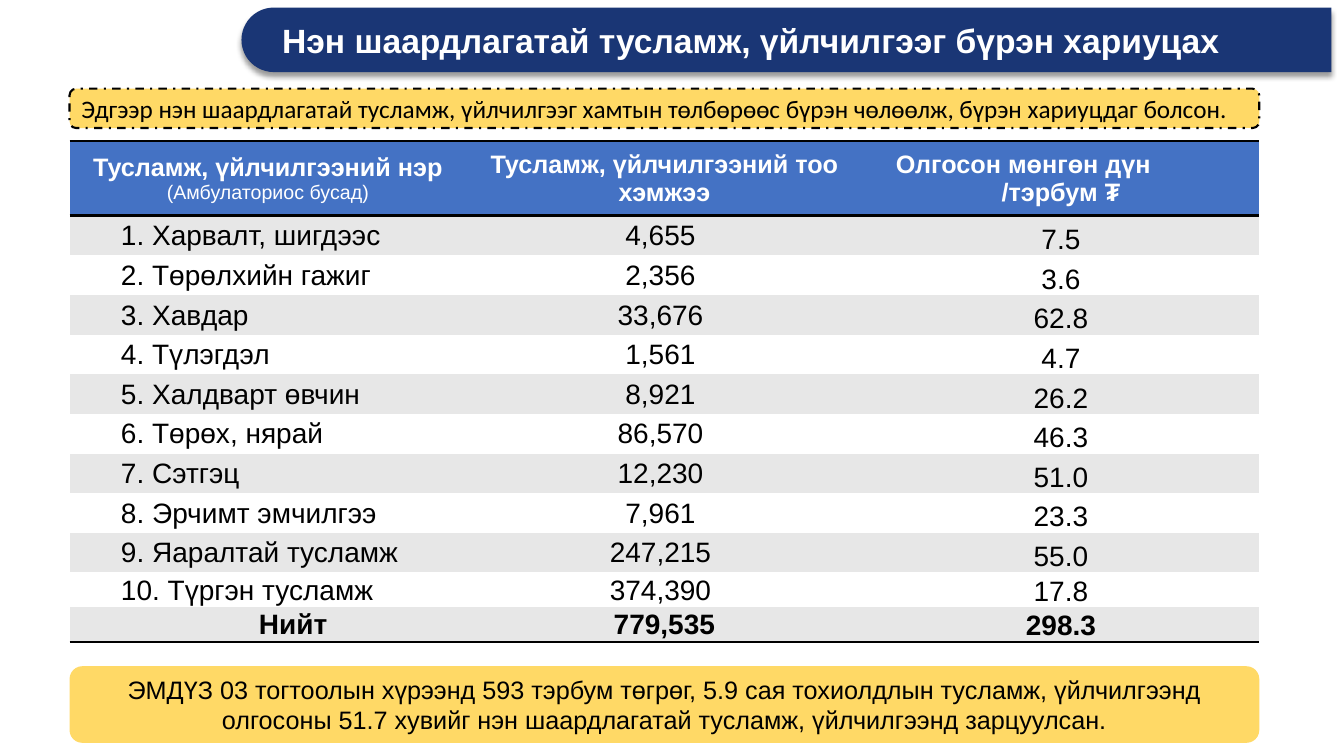
from pptx import Presentation
from pptx.dml.color import RGBColor
from pptx.enum.dml import MSO_LINE
from pptx.enum.shapes import MSO_SHAPE as Geo
from pptx.enum.text import MSO_ANCHOR as Anchor, PP_ALIGN as Align
from pptx.oxml import parse_xml
from pptx.oxml.ns import qn
from pptx.util import Inches, Pt

NS = 'xmlns:a="http://schemas.openxmlformats.org/drawingml/2006/main"'
PLAIN = "{2D5ABB26-0587-4C30-8999-92F81FD0307C}"
NAVY, BLUE, GOLD, GREY = "1A3675", "4472C4", "FFD966", "E7E7E7"
BLACK, WHITE = "000000", "FFFFFF"
LEFT, WIDE = 0.69, 11.8

HEADS = [
    [("Тусламж, үйлчилгээний нэр ", 18, True), ("(Амбулаториос бусад)", 14, False)],
    [("Тусламж, үйлчилгээний тоо хэмжээ", 18, True)],
]
ROWS = [
    ("1. Харвалт, шигдээс", "4,655 ", "7.5"),
    ("2. Төрөлхийн гажиг", "2,356 ", "3.6"),
    ("3. Хавдар", "33,676 ", "62.8"),
    ("4. Түлэгдэл", "1,561 ", "4.7"),
    ("5. Халдварт өвчин", "8,921 ", "26.2"),
    ("6. Төрөх, нярай", "86,570 ", "46.3"),
    ("7. Сэтгэц", "12,230 ", "51.0"),
    ("8. Эрчимт эмчилгээ", "7,961 ", "23.3"),
    ("9. Яаралтай тусламж", "247,215 ", "55.0"),
    ("10. Түргэн тусламж", "374,390 ", "17.8"),
    ("Нийт", "779,535", "298.3"),
]
HEIGHTS = [0.74] + [3.54 / 9] * 9 + [0.31] * 2


def rgb(code):
    return RGBColor.from_string(code)


class Board:
    def __init__(self, slide, font="Arial"):
        self.slide = slide
        self.font = font

    def text(self, para, runs, color=BLACK, align=Align.CENTER, indent=0, font=None):
        """Add (text, size, bold) runs to a paragraph."""
        para.alignment = align
        if indent:
            para._p.get_or_add_pPr().set("marL", str(Inches(indent)))
        for words, size, bold in runs:
            run = para.add_run()
            run.text = words
            run.font.name = font or self.font
            run.font.size = Pt(size)
            run.font.bold = bold
            run.font.color.rgb = rgb(color)

    def shape(self, geo, left, top, width, height, fill):
        box = self.slide.shapes.add_shape(
            geo, Inches(left), Inches(top), Inches(width), Inches(height))
        box.shadow.inherit = False
        box.fill.solid()
        box.fill.fore_color.rgb = rgb(fill)
        box.line.fill.background()
        return box

    def banner(self, title):
        bar = self.shape(Geo.ROUND_2_SAME_RECTANGLE, 7.48, -5.01, 0.64, 10.81, NAVY)
        bar.rotation = 270
        bar.adjustments[0] = 0.5
        glow = bar._element.spPr.find(qn("a:effectLst"))
        glow.append(parse_xml(
            f'<a:outerShdw {NS} blurRad="{Pt(4)}" dist="{Pt(3)}" dir="5400000" '
            f'rotWithShape="0"><a:srgbClr val="{BLACK}"><a:alpha val="40000"/>'
            '</a:srgbClr></a:outerShdw>'))
        box = self.slide.shapes.add_textbox(
            Inches(2.7), Inches(0.1), Inches(10.36), Inches(0.64))
        frame = box.text_frame
        frame.word_wrap = True
        frame.vertical_anchor = Anchor.MIDDLE
        para = frame.paragraphs[0]
        para.line_spacing = 0.9
        self.text(para, [(title, 24, True)], WHITE, Align.LEFT)

    def note(self, top, height, words, align=Align.CENTER, font=None):
        box = self.shape(Geo.ROUNDED_RECTANGLE, LEFT, top, WIDE, height, GOLD)
        frame = box.text_frame
        frame.word_wrap = True
        frame.vertical_anchor = Anchor.MIDDLE
        self.text(frame.paragraphs[0], [(words, 18, False)], align=align, font=font)
        return box

    def cell(self, cell, fill, anchor=Anchor.MIDDLE, edges=""):
        """Style a cell and return its paragraph; edges are the sides with a black rule."""
        props = cell._tc.get_or_add_tcPr()
        for side in edges:
            props.append(parse_xml(
                f'<a:ln{side} {NS} w="{Pt(2)}"><a:solidFill>'
                f'<a:srgbClr val="{BLACK}"/></a:solidFill></a:ln{side}>'))
        cell.fill.solid()
        cell.fill.fore_color.rgb = rgb(fill)
        cell.vertical_anchor = anchor
        return cell.text_frame.paragraphs[0]

    def table(self, top):
        grid = self.slide.shapes.add_table(
            len(HEIGHTS), 3, Inches(LEFT), Inches(top),
            Inches(WIDE), Inches(sum(HEIGHTS))).table
        grid._tbl.tblPr.find(qn("a:tableStyleId")).text = PLAIN
        for row, height in zip(grid.rows, HEIGHTS):
            row.height = Inches(height)

        heads = [self.cell(cell, BLUE, edges="TB") for cell in grid.rows[0].cells]
        for para, runs in zip(heads, HEADS):
            self.text(para, runs, WHITE)
        self.text(heads[2], [("Олгосон мөнгөн дүн", 18, True)],
                  WHITE, Align.LEFT, indent=0.23)
        unit = grid.cell(0, 2).text_frame.add_paragraph()
        self.text(unit, [("/тэрбум ₮", 18, True)], WHITE)

        for r, row in enumerate(ROWS, 1):
            total = r == len(ROWS)
            for c, words in enumerate(row):
                cell = grid.cell(r, c)
                cell.margin_left = cell.margin_right = cell.margin_top = Inches(0.01)
                cell.margin_bottom = 0
                para = self.cell(cell, GREY if r % 2 else WHITE,
                                 Anchor.BOTTOM if c == 2 else Anchor.MIDDLE,
                                 "B" if total else "")
                name = c == 0
                self.text(para, [(words, 20, total)],
                          align=Align.LEFT if name and not total else Align.CENTER,
                          indent=0.5 if name else 0)


def main():
    deck = Presentation()
    deck.slide_width, deck.slide_height = Inches(13.33), Inches(7.5)
    board = Board(deck.slides.add_slide(deck.slide_layouts[6]))
    board.banner("Нэн шаардлагатай тусламж, үйлчилгээг бүрэн хариуцах")
    board.table(1.4)
    board.note(6.61, 0.76,
               "ЭМДҮЗ 03 тогтоолын хүрээнд 593 тэрбум төгрөг, 5.9 сая тохиолдлын "
               "тусламж, үйлчилгээнд олгосоны 51.7 хувийг нэн шаардлагатай тусламж, "
               "үйлчилгээнд зарцуулсан.")
    lead = board.note(0.88, 0.39,
                      "Эдгээр нэн шаардлагатай тусламж, үйлчилгээг хамтын төлбөрөөс "
                      "бүрэн чөлөөлж, бүрэн хариуцдаг болсон.", Align.JUSTIFY, "Calibri")
    lead.line.color.rgb = rgb(BLACK)
    lead.line.width = Pt(1.5)
    lead.line.dash_style = MSO_LINE.DASH_DOT
    deck.save("out.pptx")


if __name__ == "__main__":
    main()
